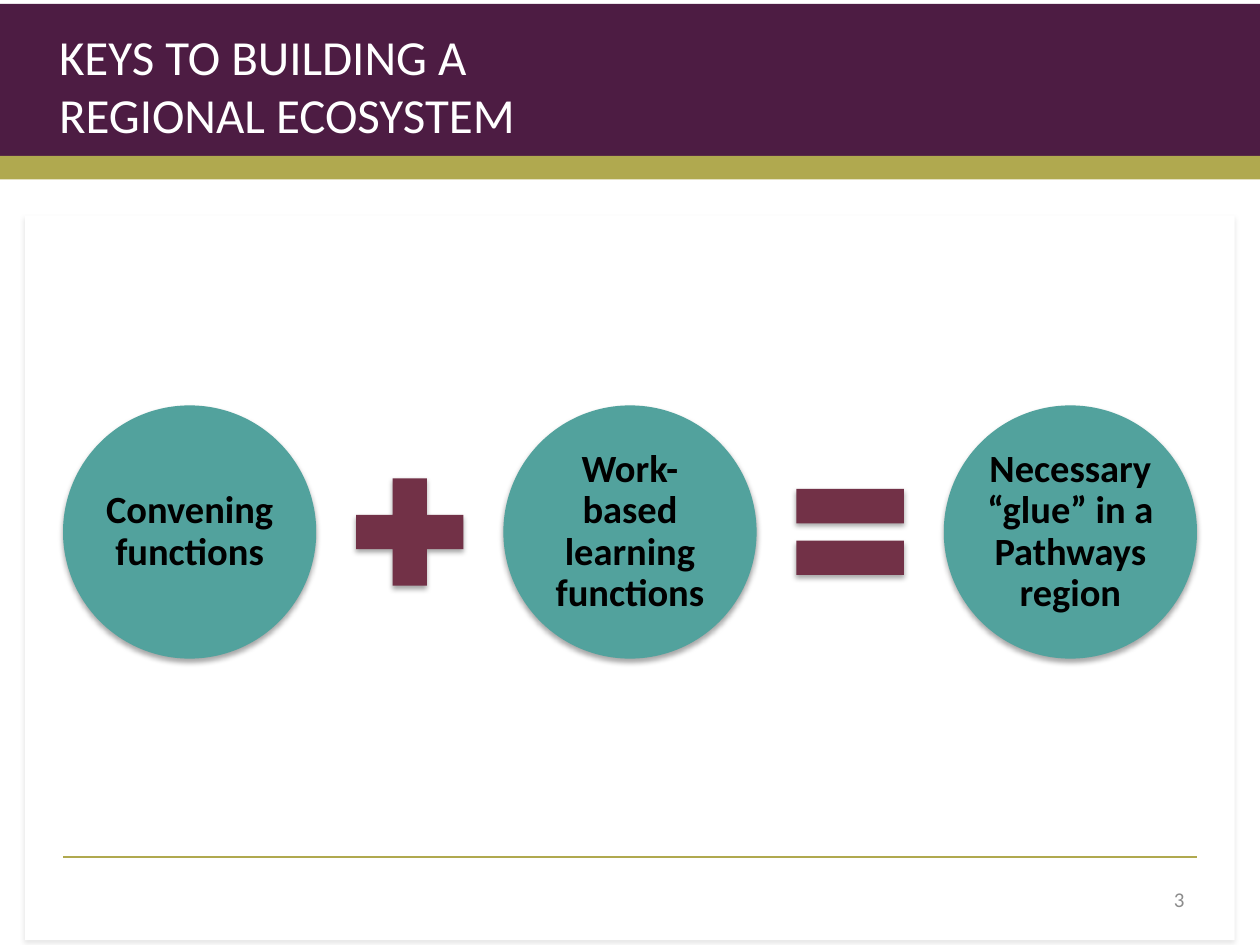
"""Build the slide on the keys to a regional ecosystem."""
from dataclasses import dataclass
from typing import Optional

from lxml import etree
from pptx import Presentation
from pptx.dml.color import RGBColor
from pptx.enum.shapes import MSO_CONNECTOR, MSO_SHAPE
from pptx.enum.text import MSO_ANCHOR, PP_ALIGN
from pptx.oxml.ns import qn
from pptx.util import Inches, Pt

RECT, OVAL = MSO_SHAPE.RECTANGLE, MSO_SHAPE.OVAL
PLUS, EQUAL = MSO_SHAPE.MATH_PLUS, MSO_SHAPE.MATH_EQUAL
LINE = MSO_CONNECTOR.STRAIGHT
TOP, MIDDLE = MSO_ANCHOR.TOP, MSO_ANCHOR.MIDDLE
LEFT, CENTER, RIGHT = PP_ALIGN.LEFT, PP_ALIGN.CENTER, PP_ALIGN.RIGHT
WIDE, HIGH = Inches(10), Inches(7.5)


@dataclass(frozen=True)
class Theme:
    """Colours, font and type sizes."""
    font: str = "Calibri"
    plum: str = "4D1C43"
    olive: str = "B0A94F"
    teal: str = "52A29D"
    wine: str = "723147"
    white: str = "FFFFFF"
    black: str = "000000"
    grey: str = "8C8C8C"
    title: int = 28
    label: int = 22
    small: int = 12


@dataclass(frozen=True)
class Box:
    """A frame in shares of the slide's width and height."""
    left: float
    top: float
    width: float
    height: float

    def place(self) -> tuple[int, int, int, int]:
        """Return the frame in slide units."""
        return (int(self.left * WIDE), int(self.top * HIGH),
                int(self.width * WIDE), int(self.height * HIGH))


@dataclass(frozen=True)
class Term:
    """A circle of the sum and the sign that follows it."""
    text: str
    sign: Optional[MSO_SHAPE] = None


THEME = Theme()
TERMS = (
    Term("Convening functions", PLUS),
    Term("Work-based learning functions", EQUAL),
    Term("Necessary “glue” in a Pathways region"),
)
EDGE, DISC, MARK, AXIS = 0.05, 0.201, 0.116, 0.563
STEP = (1 - 2 * EDGE - DISC) / (len(TERMS) - 1)


def square(mid: float, size: float) -> Box:
    """Return a square centred on the axis of the sum."""
    high = size * WIDE / HIGH
    return Box(mid - size / 2, AXIS - high / 2, size, high)


def shade(shape, alpha: int) -> None:
    """Drop a soft black shadow straight down."""
    effects = shape._element.spPr.find(qn("a:effectLst"))
    drop = etree.SubElement(effects, qn("a:outerShdw"), blurRad=str(Pt(3.1)),
                            dist=str(Pt(1.8)), dir="5400000", rotWithShape="0")
    tone = etree.SubElement(drop, qn("a:srgbClr"), val=THEME.black)
    etree.SubElement(tone, qn("a:alpha"), val=str(alpha * 1000))


def draw(slide, kind: MSO_SHAPE, box: Box, fill: str, alpha: int = 0):
    """Add a filled shape without outline."""
    shape = slide.shapes.add_shape(kind, *box.place())
    shape.shadow.inherit = False
    shape.fill.solid()
    shape.fill.fore_color.rgb = RGBColor.from_string(fill)
    shape.line.fill.background()
    if alpha:
        shade(shape, alpha)
    return shape


def write(shape, text: str, size: int, color: str, align: PP_ALIGN = LEFT,
          anchor: MSO_ANCHOR = MIDDLE, bold: bool = False) -> None:
    """Set the text of a shape in one style."""
    frame = shape.text_frame
    frame.word_wrap = True
    frame.vertical_anchor = anchor
    par = frame.paragraphs[0]
    par.text = text
    par.alignment = align
    par.font.name, par.font.size, par.font.bold = THEME.font, Pt(size), bold
    par.font.color.rgb = RGBColor.from_string(color)


def rule(slide, top: float) -> None:
    """Draw a thin line between the margins."""
    level = int(top * HIGH)
    line = slide.shapes.add_connector(
        LINE, int(EDGE * WIDE), level, int((1 - EDGE) * WIDE), level)
    line.line.color.rgb = RGBColor.from_string(THEME.olive)
    line.line.width = Pt(1)
    etree.SubElement(line._element.spPr, qn("a:effectLst"))


def add_term(slide, term: Term, mid: float) -> None:
    """Draw one circle and its sign."""
    disc = draw(slide, OVAL, square(mid, DISC), THEME.teal, 35)
    write(disc, term.text, THEME.label, THEME.black, CENTER, bold=True)
    frame = disc.text_frame
    frame.margin_left = frame.margin_right = Inches(0.03)
    frame.margin_top = frame.margin_bottom = Inches(0.03)
    frame.paragraphs[0].line_spacing = 0.9
    if term.sign is not None:
        draw(slide, term.sign, square(mid + STEP / 2, MARK), THEME.wine, 35)


def main() -> None:
    """Build and save the slide."""
    deck = Presentation()
    deck.slide_width, deck.slide_height = WIDE, HIGH
    slide = deck.slides.add_slide(deck.slide_layouts[6])
    draw(slide, RECT, Box(0, 0.004, 1, 0.167), THEME.plum)
    draw(slide, RECT, Box(0, 0.165, 1, 0.025), THEME.olive)
    draw(slide, RECT, Box(0.02, 0.228, 0.96, 0.767), THEME.white, 10)
    rule(slide, 0.907)
    for col, term in enumerate(TERMS):
        add_term(slide, term, EDGE + DISC / 2 + col * STEP)
    page = slide.shapes.add_textbox(*Box(0.717, 0.925, 0.233, 0.053).place())
    write(page, "3", THEME.small, THEME.grey, RIGHT)
    title = slide.shapes.add_textbox(*Box(0.037, 0.021, 0.672, 0.151).place())
    write(title, "KEYS TO BUILDING A\vREGIONAL ECOSYSTEM", THEME.title,
          THEME.white, anchor=TOP)
    deck.save("out.pptx")


if __name__ == "__main__":
    main()
